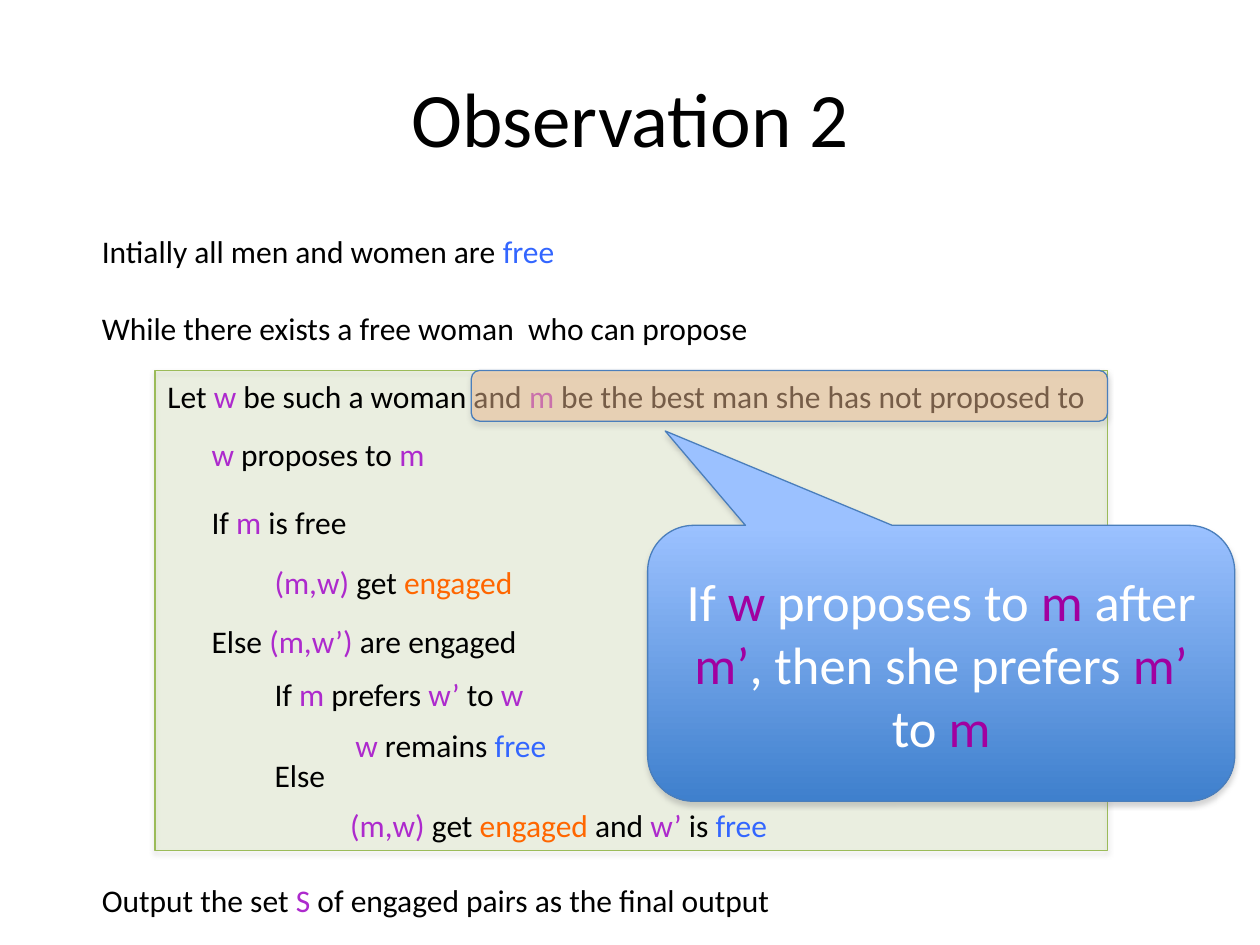
import dataclasses

import pptx
import pptx.dml.color
import pptx.enum.shapes
import pptx.enum.text
import pptx.oxml
import pptx.oxml.ns
import pptx.util

Pt = pptx.util.Pt
SHAPE = pptx.enum.shapes.MSO_SHAPE
ALIGN = pptx.enum.text.PP_ALIGN
ANCHOR = pptx.enum.text.MSO_ANCHOR
qn = pptx.oxml.ns.qn


@dataclasses.dataclass(frozen=True)
class Theme:
    font: str = "Calibri"
    title_size: float = 44
    body_size: float = 18
    callout_size: float = 30
    ink: str = "000000"
    white: str = "FFFFFF"
    person: str = "AD2ACD"
    callout_person: str = "A100A0"
    free: str = "3366FF"
    engaged: str = "FF6600"
    loop: str = "9BBB59"
    highlight: str = "FAC090"
    outline: str = "4A7EBB"
    callout_top: str = "9BC1FF"
    callout_bottom: str = "3F80CD"
    shadow: str = "808080"


THEME = Theme()
LINE_HEIGHT = 29


def rgb(value):
    return pptx.dml.color.RGBColor.from_string(value)


def person(text):
    return text, THEME.person


def write(frame, runs, size=THEME.body_size, color=THEME.ink,
          align=ALIGN.LEFT, anchor=ANCHOR.TOP, wrap=False):
    """Write runs, each a string or a (text, colour) pair, as one paragraph."""
    frame.word_wrap = wrap
    frame.vertical_anchor = anchor
    paragraph = frame.paragraphs[0]
    paragraph.alignment = align
    for part in runs:
        text, run_color = (part, color) if isinstance(part, str) else part
        run = paragraph.add_run()
        run.text = text
        run.font.name = THEME.font
        run.font.size = Pt(size)
        run.font.color.rgb = rgb(run_color)


def add_line(slide, left, top, width, runs):
    box = slide.shapes.add_textbox(Pt(left), Pt(top), Pt(width), Pt(LINE_HEIGHT))
    write(box.text_frame, runs)


def add_panel(slide, kind, box, line, fill=None, opacity=100, adjustments=()):
    """Add an outlined shape with a soft shadow below it."""
    panel = slide.shapes.add_shape(kind, *map(Pt, box))
    for index, value in enumerate(adjustments):
        panel.adjustments[index] = value
    if fill:
        panel.fill.solid()
        panel.fill.fore_color.rgb = rgb(fill)
        tint = panel.fill._xPr.find(qn("a:solidFill"))[0]
        tint.append(pptx.oxml.parse_xml(
            f'<a:alpha {pptx.oxml.ns.nsdecls("a")} val="{opacity * 1000}"/>'))
    panel.line.color.rgb = rgb(line)
    panel.line.width = Pt(0.75)
    panel.shadow.inherit = False
    panel._element.spPr.find(qn("a:effectLst")).append(pptx.oxml.parse_xml(
        f'<a:outerShdw {pptx.oxml.ns.nsdecls("a")} blurRad="{Pt(3.1)}" '
        f'dist="{Pt(1.8)}" dir="5400000" rotWithShape="0">'
        f'<a:srgbClr val="{THEME.shadow}"><a:alpha val="35000"/></a:srgbClr>'
        '</a:outerShdw>'))
    return panel


def place_title(slide, box):
    title = slide.shapes.title
    title.left, title.top, title.width, title.height = map(Pt, box)
    write(title.text_frame, ["Observation 2"], size=THEME.title_size,
          align=ALIGN.CENTER, anchor=ANCHOR.MIDDLE, wrap=True)


def place_outer_steps(slide, box):
    left, top, width, height = box
    free = ("free", THEME.free)
    add_line(slide, left, top, width, ["Intially all men and women are ", free])
    add_line(slide, left, top + 43.9, width,
             ["While there exists a free woman  who can propose"])
    add_line(slide, left, top + height - LINE_HEIGHT, width,
             ["Output the set ", person("S"),
              " of engaged pairs as the final output"])


def place_loop(slide, box):
    left, top, width, _ = box
    add_panel(slide, SHAPE.RECTANGLE, box, THEME.loop, THEME.loop, opacity=15)

    # Loop body: indent, offset from the top, runs
    m, w, rival, pair = map(person, ("m", "w", "w’", "(m,w)"))
    free, engaged = ("free", THEME.free), ("engaged", THEME.engaged)
    branch, action, outcome = 25.2, 61.2, 104.4
    steps = [
        (0, 0, ["Let ", w, " be such a woman and ", m,
                " be the best man she has not proposed to"]),
        (branch, 33.1, [w, " proposes to ", m]),
        (branch, 72, ["If ", m, " is free"]),
        (action, 106.6, [person("(m,w) "), "get ", engaged]),
        (branch, 140.4, ["Else ", person("(m,w’)"), " are engaged"]),
        (action, 170.6, ["If ", m, " prefers ", rival, " to ", w]),
        (outcome + 3, 199.4, [w, " remains ", free]),
        (action, 216.7, ["Else"]),
        (outcome, 245.5, [pair, " get ", engaged, " and ", rival, " is ", free]),
    ]
    for indent, offset, runs in steps:
        add_line(slide, left + indent, top + offset, width - indent, runs)

    # Highlight over the choice of the best man
    reach = 363.6
    add_panel(slide, SHAPE.ROUNDED_RECTANGLE,
              (left + width - reach, top, reach, LINE_HEIGHT),
              THEME.outline, THEME.highlight, opacity=43)


def place_callout(slide, box):
    callout = add_panel(slide, SHAPE.ROUNDED_RECTANGULAR_CALLOUT, box,
                        THEME.outline, adjustments=(-0.47, -0.842, 0.167))
    callout.fill.gradient()
    callout.fill.gradient_angle = 270
    colors = (THEME.callout_top, THEME.callout_bottom)
    for position, (stop, color) in enumerate(zip(callout.fill.gradient_stops, colors)):
        stop.position = position
        stop.color.rgb = rgb(color)
    w, m, earlier = ((name, THEME.callout_person) for name in ("w", "m", "m’"))
    write(callout.text_frame,
          ["If ", w, " proposes to ", m, " after ", earlier,
           ", then she prefers ", earlier, " to ", m],
          size=THEME.callout_size, color=THEME.white,
          align=ALIGN.CENTER, anchor=ANCHOR.MIDDLE, wrap=True)


def main():
    deck = pptx.Presentation()
    deck.slide_width, deck.slide_height = Pt(720), Pt(540)
    slide = deck.slides.add_slide(deck.slide_layouts[5])
    place_title(slide, (36, 21.6, 648, 90))
    place_outer_steps(slide, (51.1, 128.9, 401, 399.8))
    place_loop(slide, (88.6, 211.7, 544.3, 274.3))
    place_callout(slide, (370.1, 300.2, 335.5, 157.7))
    deck.save("out.pptx")


if __name__ == "__main__":
    main()
